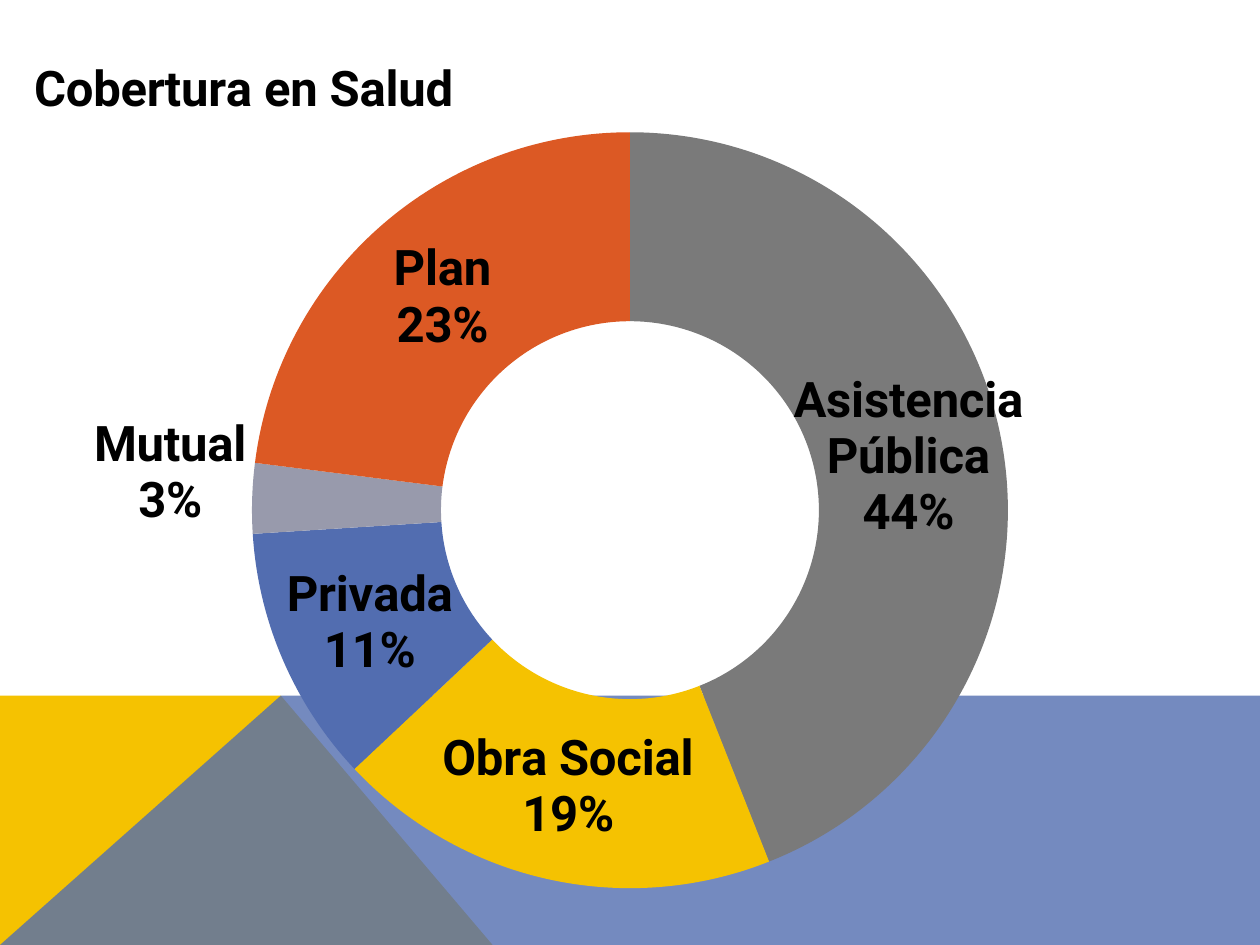
import pptx
import pptx.chart.data
import pptx.dml.color
import pptx.enum.chart
import pptx.oxml
import pptx.oxml.ns
import pptx.util

Pt = pptx.util.Pt
RGBColor = pptx.dml.color.RGBColor
qn = pptx.oxml.ns.qn

BLACK = RGBColor(0x00, 0x00, 0x00)
GREY = RGBColor(0x7A, 0x7A, 0x7A)
YELLOW = RGBColor(0xF5, 0xC2, 0x01)
BLUE = RGBColor(0x52, 0x6D, 0xB0)
LILAC = RGBColor(0x98, 0x9A, 0xAC)
ORANGE = RGBColor(0xDC, 0x59, 0x24)

WIDTH, HEIGHT = 720, 540
BAND_TOP, PEAK, YELLOW_RIGHT = 397.5, 160.5, 281.5

COVERAGE = [
    ("Asistencia Pública", 44, GREY),
    ("Obra Social", 19, YELLOW),
    ("Privada", 11, BLUE),
    ("Mutual", 3, LILAC),
    ("Plan", 23, ORANGE),
]


def chart_element(tag, content="", **attributes):
    """Return a new element of the chart namespace."""
    listed = "".join(f' {name}="{value}"' for name, value in attributes.items())
    return pptx.oxml.parse_xml(
        f"<c:{tag} {pptx.oxml.ns.nsdecls('c')}{listed}>{content}</c:{tag}>"
    )


def manual_layout(**settings):
    """Return a layout whose settings are fractions of the chart area."""
    layout = chart_element("layout")
    manual = chart_element("manualLayout")
    for name, value in settings.items():
        manual.append(chart_element(name, val=value))
    layout.append(manual)
    return layout


def set_layout(parent, index, layout):
    for old in parent.findall(qn("c:layout")):
        parent.remove(old)
    parent.insert(index, layout)


class SlideBuilder:
    font_name = "Roboto"
    font_size = 28

    def __init__(self, slide):
        self.slide = slide

    def style(self, font):
        font.name = self.font_name
        font.size = Pt(self.font_size)
        font.bold = True
        font.color.rgb = BLACK

    def polygon(self, points, color, opacity=100):
        start, *others = [(Pt(x), Pt(y)) for x, y in points]
        builder = self.slide.shapes.build_freeform(*start)
        builder.add_line_segments(others, close=True)
        shape = builder.convert_to_shape()
        shape.shadow.inherit = False
        shape.line.fill.background()
        shape.fill.solid()
        shape.fill.fore_color.rgb = color
        if opacity < 100:
            color_element = next(shape._element.spPr.iter(qn("a:srgbClr")))
            color_element.append(pptx.oxml.parse_xml(
                f'<a:alpha {pptx.oxml.ns.nsdecls("a")} val="{opacity * 1000}"/>'
            ))

    def doughnut(self, title, slices):
        data = pptx.chart.data.CategoryChartData()
        data.categories = [name for name, _, _ in slices]
        data.add_series("Series 1", [value for _, value, _ in slices])
        chart = self.slide.shapes.add_chart(
            pptx.enum.chart.XL_CHART_TYPE.DOUGHNUT,
            Pt(0), Pt(0), Pt(WIDTH), Pt(HEIGHT), data,
        ).chart
        chart.has_legend = False
        self.style(chart.font)
        chart.has_title = True
        run = chart.chart_title.text_frame.paragraphs[0].add_run()
        run.text = title
        self.style(run.font)
        set_layout(chart.chart_title._element, 1, manual_layout(
            xMode="edge", yMode="edge", x=0.02, y=0.05))
        plot_area = next(chart._chartSpace.iter(qn("c:plotArea")))
        set_layout(plot_area, 0, manual_layout(
            layoutTarget="inner", xMode="edge", yMode="edge",
            x=0.2, y=0.14, w=0.6, h=0.8))
        series = chart.plots[0].series[0]
        for index, (_, _, color) in enumerate(slices):
            slice_format = series.points[index].format
            slice_format.fill.solid()
            slice_format.fill.fore_color.rgb = color
            slice_format.line.fill.background()
        self.slice_labels(series.data_labels)
        return series

    def slice_labels(self, labels):
        labels.show_value = False
        labels.show_category_name = True
        labels.show_percentage = True
        labels.number_format = "0%"
        labels.number_format_is_linked = False
        self.style(labels.font)
        element = labels._element
        element.find(qn("c:showBubbleSize")).addnext(chart_element("separator", "\n"))

    def move_label(self, series, index, x, y):
        """Shift one slice label by fractions of the chart area."""
        label = chart_element("dLbl")
        label.append(chart_element("idx", val=index))
        label.append(manual_layout(x=x, y=y))
        shown = {"showCatName", "showPercent"}
        for name in ("showLegendKey", "showVal", "showCatName",
                     "showSerName", "showPercent", "showBubbleSize"):
            label.append(chart_element(name, val=int(name in shown)))
        label.append(chart_element("separator", "\n"))
        series.data_labels._element.insert(0, label)
        self.style(series.points[index].data_label.font)


def main():
    presentation = pptx.Presentation()
    presentation.slide_width = Pt(WIDTH)
    presentation.slide_height = Pt(HEIGHT)
    slide = presentation.slides.add_slide(presentation.slide_layouts[6])
    builder = SlideBuilder(slide)
    builder.polygon([(0, HEIGHT), (0, BAND_TOP), (PEAK, BAND_TOP),
                     (YELLOW_RIGHT, HEIGHT)], YELLOW)
    builder.polygon([(0, HEIGHT), (PEAK, BAND_TOP), (WIDTH, BAND_TOP),
                     (WIDTH, HEIGHT)], BLUE, opacity=80)
    series = builder.doughnut("Cobertura en Salud", COVERAGE)
    builder.move_label(series, index=3, x=-0.14, y=-0.03)
    presentation.save("out.pptx")


if __name__ == "__main__":
    main()
